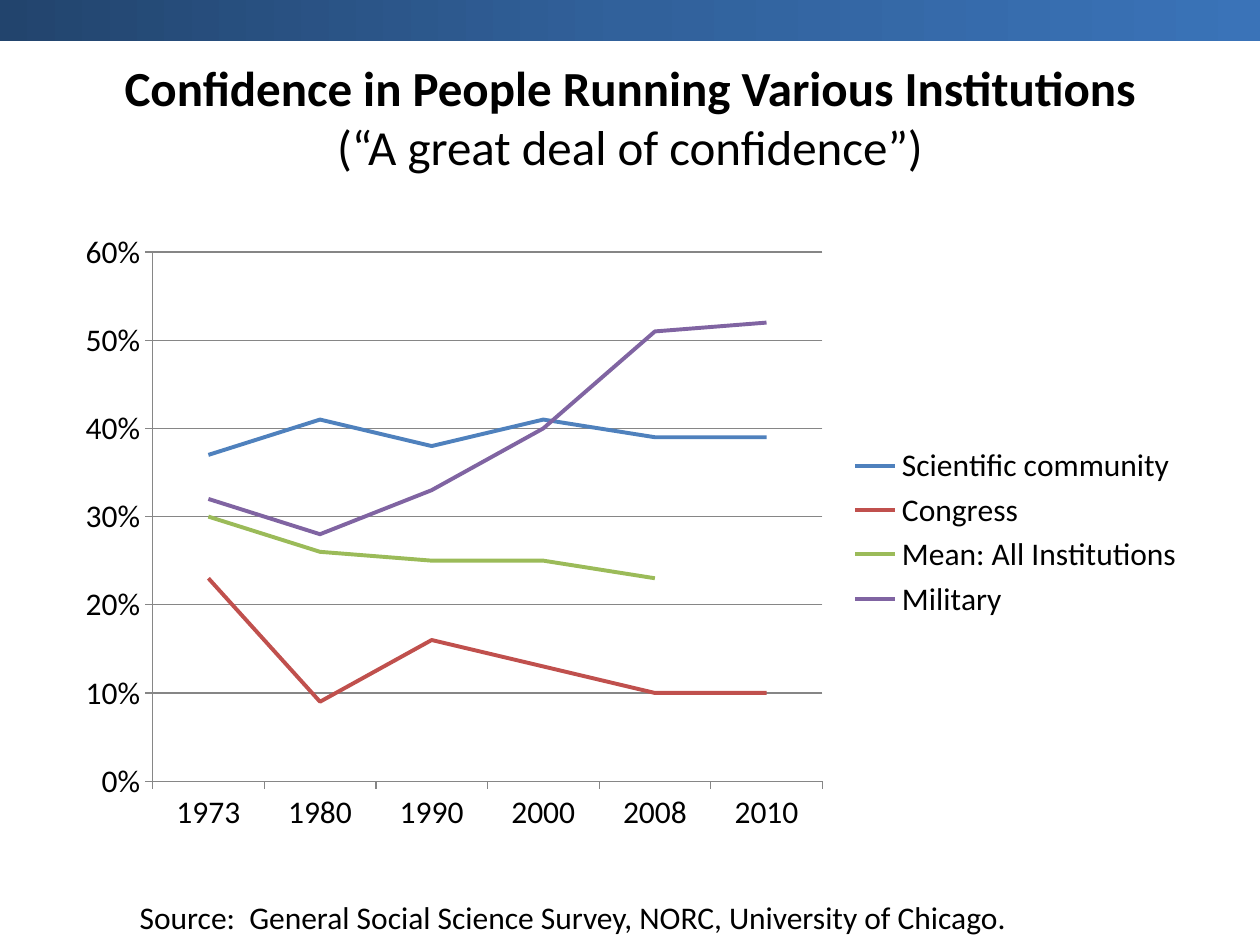
from copy import deepcopy

from pptx import Presentation
from pptx.chart.data import CategoryChartData
from pptx.dml.color import RGBColor
from pptx.enum.chart import XL_CHART_TYPE, XL_LEGEND_POSITION, XL_TICK_MARK
from pptx.enum.shapes import MSO_SHAPE
from pptx.enum.text import MSO_ANCHOR, MSO_AUTO_SIZE, PP_ALIGN
from pptx.util import Inches, Pt

FONT = "Calibri"
COLORS = {
    "text": "000000",
    "grid": "868686",
    "band_start": "22446D",
    "band_middle": "31619B",
    "band_end": "3A73B8",
    "Scientific community": "4F81BD",
    "Congress": "C0504D",
    "Mean: All Institutions": "9BBB59",
    "Military": "8064A2",
}
YEARS = ["1973", "1980", "1990", "2000", "2008", "2010"]
CONFIDENCE = {
    "Scientific community": [0.37, 0.41, 0.38, 0.41, 0.39, 0.39],
    "Congress": [0.23, 0.09, 0.16, 0.13, 0.10, 0.10],
    "Mean: All Institutions": [0.30, 0.26, 0.25, 0.25, 0.23, None],
    "Military": [0.32, 0.28, 0.33, 0.40, 0.51, 0.52],
}


def color(name):
    """Return the named colour."""
    return RGBColor.from_string(COLORS[name])


def set_font(font, size):
    """Apply the slide's typeface and text colour at a size."""
    font.name = FONT
    font.size = Pt(size)
    font.color.rgb = color("text")


def style_line(line, name, width):
    """Give a line its colour and width."""
    line.color.rgb = color(name)
    line.width = Pt(width)


def add_title(slide, heading, measure):
    """Fill the title with a bold heading above a regular measure."""
    title = slide.shapes.title
    title.left, title.top = Inches(0.5), Inches(0.3)
    title.width, title.height = Inches(9), Inches(1.25)
    title.text_frame.vertical_anchor = MSO_ANCHOR.MIDDLE
    paragraph = title.text_frame.paragraphs[0]
    paragraph.alignment = PP_ALIGN.CENTER
    set_font(paragraph.font, 28)
    heading_run = paragraph.add_run()
    heading_run.text = heading
    heading_run.font.bold = True
    paragraph.add_line_break()
    measure_run = paragraph.add_run()
    measure_run.text = measure
    for run in paragraph.runs:
        run.font.size = Pt(28)


def style_axis(axis):
    """Give an axis outward ticks and a grey line."""
    axis.major_tick_mark = XL_TICK_MARK.OUTSIDE
    axis.minor_tick_mark = XL_TICK_MARK.NONE
    style_line(axis.format.line, "grid", 0.75)


def add_confidence_chart(slide):
    """Add the line chart of confidence by institution."""
    data = CategoryChartData(number_format="0%")
    data.categories = YEARS
    for institution, shares in CONFIDENCE.items():
        data.add_series(institution, shares)
    chart = slide.shapes.add_chart(
        XL_CHART_TYPE.LINE, Inches(0.5), Inches(1.75), Inches(9), Inches(4.95), data
    ).chart
    set_font(chart.font, 18)
    chart.has_title = False
    chart.has_legend = True
    chart.legend.position = XL_LEGEND_POSITION.RIGHT
    chart.legend.include_in_layout = False

    style_axis(chart.category_axis)
    shares_axis = chart.value_axis
    style_axis(shares_axis)
    shares_axis.minimum_scale, shares_axis.maximum_scale = 0, 0.6
    shares_axis.major_unit = 0.1
    shares_axis.tick_labels.number_format = "0%"
    shares_axis.tick_labels.number_format_is_linked = False
    shares_axis.has_major_gridlines = True
    style_line(shares_axis.major_gridlines.format.line, "grid", 0.75)

    chart.plots[0].vary_by_categories = False
    for series in chart.plots[0].series:
        series.smooth = False
        style_line(series.format.line, series.name, 2.25)


def add_source(slide, citation):
    """Add the source line below the chart."""
    source = slide.shapes.add_textbox(
        Inches(1.01), Inches(7.08), Inches(7.09), Inches(0.4)
    ).text_frame
    source.word_wrap = False
    source.auto_size = MSO_AUTO_SIZE.SHAPE_TO_FIT_TEXT
    source.text = citation
    set_font(source.paragraphs[0].font, 18)


def add_top_band(slide):
    """Add the gradient band along the top edge."""
    band = slide.shapes.add_shape(
        MSO_SHAPE.RECTANGLE, 0, 0, Inches(10), Inches(0.33)
    )
    band.shadow.inherit = False
    band.line.fill.background()
    band.fill.gradient()
    band.fill.gradient_angle = 0
    first_stop = band._element.spPr.xpath(".//a:gs")[0]
    first_stop.addnext(deepcopy(first_stop))
    names = ["band_start", "band_middle", "band_end"]
    for index, (stop, name) in enumerate(zip(band.fill.gradient_stops, names)):
        stop.position = index / 2
        stop.color.rgb = color(name)


def main():
    """Build and save the slide."""
    deck = Presentation()
    deck.slide_width, deck.slide_height = Inches(10), Inches(7.5)
    slide = deck.slides.add_slide(deck.slide_layouts[5])
    add_title(
        slide,
        "Confidence in People Running Various Institutions",
        "(“A great deal of confidence”)",
    )
    add_confidence_chart(slide)
    add_source(
        slide, "Source:  General Social Science Survey, NORC, University of Chicago."
    )
    add_top_band(slide)
    deck.save("out.pptx")


if __name__ == "__main__":
    main()
